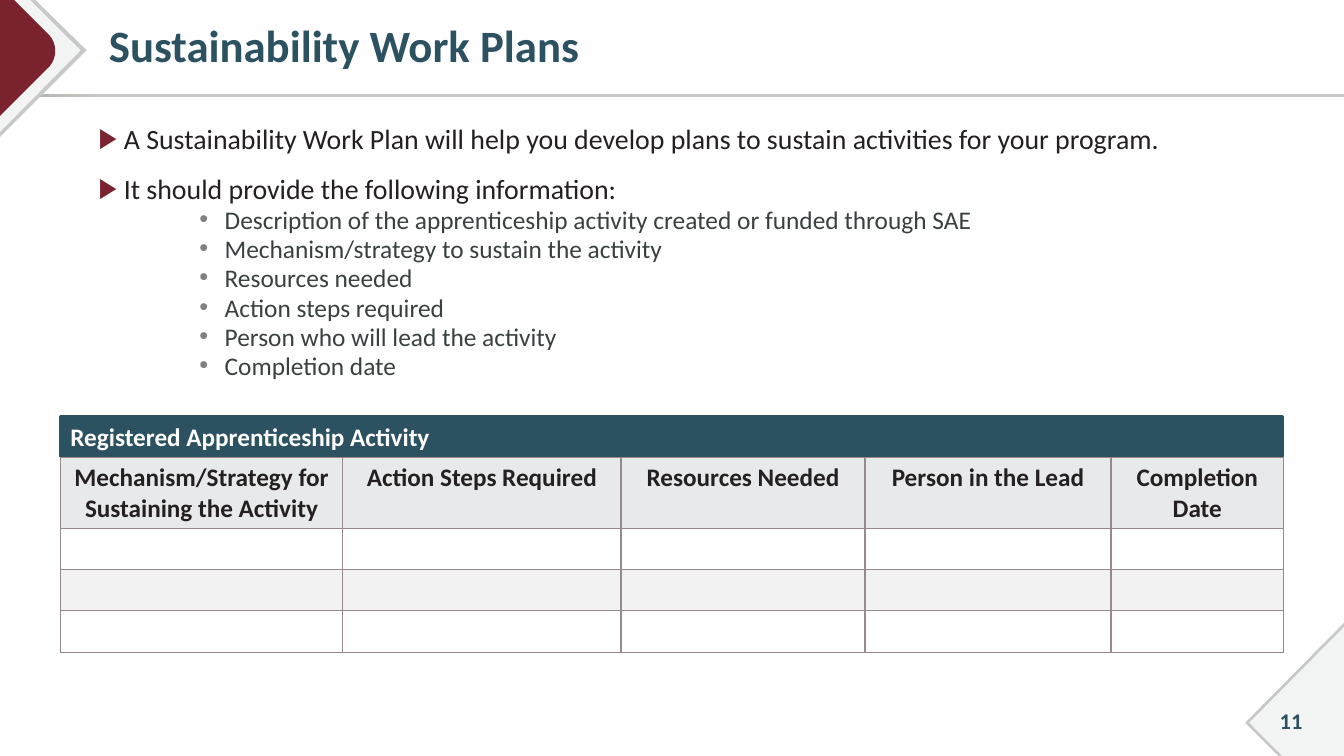
from lxml import etree
from pptx import Presentation
from pptx.dml.color import RGBColor
from pptx.enum.shapes import MSO_SHAPE
from pptx.enum.text import MSO_ANCHOR, PP_ALIGN
from pptx.oxml.ns import qn
from pptx.util import Inches, Pt

RECTANGLE = MSO_SHAPE.RECTANGLE
TOP, MIDDLE = MSO_ANCHOR.TOP, MSO_ANCHOR.MIDDLE
LEFT, CENTER = PP_ALIGN.LEFT, PP_ALIGN.CENTER

TEAL, MAROON, INK, SLATE = "2C5261", "7A232F", "242021", "3A4040"
GREY, PALE, WHITE, BORDER = "C8C8C6", "F3F4F4", "FFFFFF", "978A8D"

POINTS = [
    "A Sustainability Work Plan will help you develop plans to sustain activities for your program.",
    "It should provide the following information:",
]
DETAILS = [
    "Description of the apprenticeship activity created or funded through SAE",
    "Mechanism/strategy to sustain the activity",
    "Resources needed",
    "Action steps required",
    "Person who will lead the activity",
    "Completion date",
]
COLUMNS = {
    "Mechanism/Strategy for Sustaining the Activity": 2.8,
    "Action Steps Required": 2.76,
    "Resources Needed": 2.42,
    "Person in the Lead": 2.44,
    "Completion Date": 1.71,
}
POINT = {"size": 19.9, "color": INK, "before": 17.5, "margin": 0.25,
         "bullet": "▶", "bullet_color": MAROON}
DETAIL = {"size": 18.1, "color": SLATE, "before": 4.6, "margin": 1.25,
          "bullet": "•", "bullet_color": "808080"}


def color(value):
    return RGBColor.from_string(value)


def paint(target, value):
    target.fill.solid()
    target.fill.fore_color.rgb = color(value)


def write(para, text, size, value, bold=False, align=LEFT):
    para.text = text
    para.alignment = align
    formats = {"name": "Calibri", "size": Pt(size), "bold": bold}
    for name, setting in formats.items():
        setattr(para.font, name, setting)
    para.font.color.rgb = color(value)


def set_frame(frame, anchor=TOP, left=0.1):
    formats = {"word_wrap": True, "vertical_anchor": anchor,
               "margin_left": Inches(left), "margin_right": Inches(0.1),
               "margin_top": Inches(0.05), "margin_bottom": Inches(0.05)}
    for name, setting in formats.items():
        setattr(frame, name, setting)


def add_text(page, place, anchor=TOP, left=0.1):
    box = page.shapes.add_textbox(*map(Inches, place))
    set_frame(box.text_frame, anchor, left)
    return box.text_frame


def add_bar(page, place):
    bar = page.shapes.add_shape(RECTANGLE, *map(Inches, place))
    bar.shadow.inherit = False
    bar.line.fill.background()
    return bar


def add_outline(page, points, value):
    corners = [(Inches(x), Inches(y)) for x, y in points]
    builder = page.shapes.build_freeform(*corners[0])
    builder.add_line_segments(corners[1:], close=True)
    outline = builder.convert_to_shape()
    outline.shadow.inherit = False
    outline.line.fill.background()
    paint(outline, value)


def curve(controls, steps=16):
    """Points along a cubic curve."""
    points = []
    for step in range(steps + 1):
        t = step / steps
        weights = ((1 - t) ** 3, 3 * t * (1 - t) ** 2, 3 * t * t * (1 - t), t ** 3)
        points.append(tuple(sum(w * p[axis] for w, p in zip(weights, controls))
                            for axis in (0, 1)))
    return points


def add_bullet(para, style):
    properties = para._p.get_or_add_pPr()
    properties.set("marL", str(Inches(style["margin"])))
    properties.set("indent", str(Inches(-0.25)))
    bullet_color = etree.SubElement(properties, qn("a:buClr"))
    etree.SubElement(bullet_color, qn("a:srgbClr"), val=style["bullet_color"])
    etree.SubElement(properties, qn("a:buFont"), typeface="Arial")
    etree.SubElement(properties, qn("a:buChar"), char=style["bullet"])


def add_list(page, place, entries):
    frame = add_text(page, place)
    for index, (text, style) in enumerate(entries):
        para = frame.paragraphs[0] if index == 0 else frame.add_paragraph()
        add_bullet(para, style)
        para.line_spacing = 0.75
        para.space_before = Pt(style["before"] if index else 0)
        write(para, text, style["size"], style["color"])


def add_borders(cell):
    properties = cell._tc.get_or_add_tcPr()
    for side in ("a:lnL", "a:lnR", "a:lnT", "a:lnB"):
        line = etree.SubElement(properties, qn(side), w=str(Pt(1)))
        fill = etree.SubElement(line, qn("a:solidFill"))
        etree.SubElement(fill, qn("a:srgbClr"), val=BORDER)


def add_plan_table(page, place, heights, row_fills):
    table = page.shapes.add_table(len(heights), len(COLUMNS), *map(Inches, place)).table
    table.first_row = table.horz_banding = False
    for column, width in zip(table.columns, COLUMNS.values()):
        column.width = Inches(width)
    for row, height, value in zip(table.rows, heights, row_fills):
        row.height = Inches(height)
        for cell in row.cells:
            add_borders(cell)
            paint(cell, value)
    for cell, heading in zip(table.rows[0].cells, COLUMNS):
        write(cell.text_frame.paragraphs[0], heading, 18, INK, True, CENTER)


def add_decoration(page):
    # Rule under the title
    rule = add_bar(page, (0, 0.93, 13.33, 0.03))
    rule.fill.gradient()
    rule.fill.gradient_angle = 0
    for stop, position, value in zip(rule.fill.gradient_stops, (0, 0.08), ("ABABA8", GREY)):
        stop.position = position
        stop.color.rgb = color(value)

    # Top left corner
    add_outline(page, [(0, 0), (0.35, 0), (0.86, 0.5), (0, 1.36)], GREY)
    add_outline(page, [(0, 0), (0.3, 0), (0.8, 0.5), (0, 1.31)], PALE)
    tip = curve([(0.48, 0.34), (0.57, 0.43), (0.57, 0.58), (0.48, 0.67)])
    add_outline(page, [(0, 0), (0.14, 0), *tip, (0, 1.15)], MAROON)

    # Bottom right corner
    add_outline(page, [(13.33, 6.18), (13.33, 7.5), (12.68, 7.5), (12.35, 7.17)], GREY)
    add_outline(page, [(13.33, 6.22), (13.33, 7.5), (12.72, 7.5), (12.39, 7.17)], PALE)


def main():
    deck = Presentation()
    deck.slide_width, deck.slide_height = Inches(13.33), Inches(7.5)
    page = deck.slides.add_slide(deck.slide_layouts[6])
    add_decoration(page)

    # Title and bullets
    title = add_text(page, (0.88, 0.05, 12.12, 0.86), MIDDLE, 0.2)
    title.paragraphs[0].line_spacing = 0.9
    write(title.paragraphs[0], "Sustainability Work Plans", 32, TEAL, True)
    entries = [(text, POINT) for text in POINTS] + [(text, DETAIL) for text in DETAILS]
    add_list(page, (0.88, 1.24, 12.12, 2.7), entries)

    # Work plan table with its banner
    banner = add_bar(page, (0.6, 4.13, 12.12, 0.4))
    paint(banner, TEAL)
    banner.line.color.rgb = color(TEAL)
    banner.line.width = Pt(2.25)
    set_frame(banner.text_frame, MIDDLE)
    write(banner.text_frame.paragraphs[0], "Registered Apprenticeship Activity", 18, WHITE, True)
    add_plan_table(page, (0.6, 4.54, 12.12, 1.92), [0.69] + [0.41] * 3,
                   ["E8E9EA", WHITE, "F2F2F2", WHITE])

    # Page number
    number = add_text(page, (12.45, 6.95, 0.71, 0.4), MIDDLE)
    write(number.paragraphs[0], "11", 16, TEAL, True, CENTER)

    deck.save("out.pptx")


if __name__ == "__main__":
    main()
